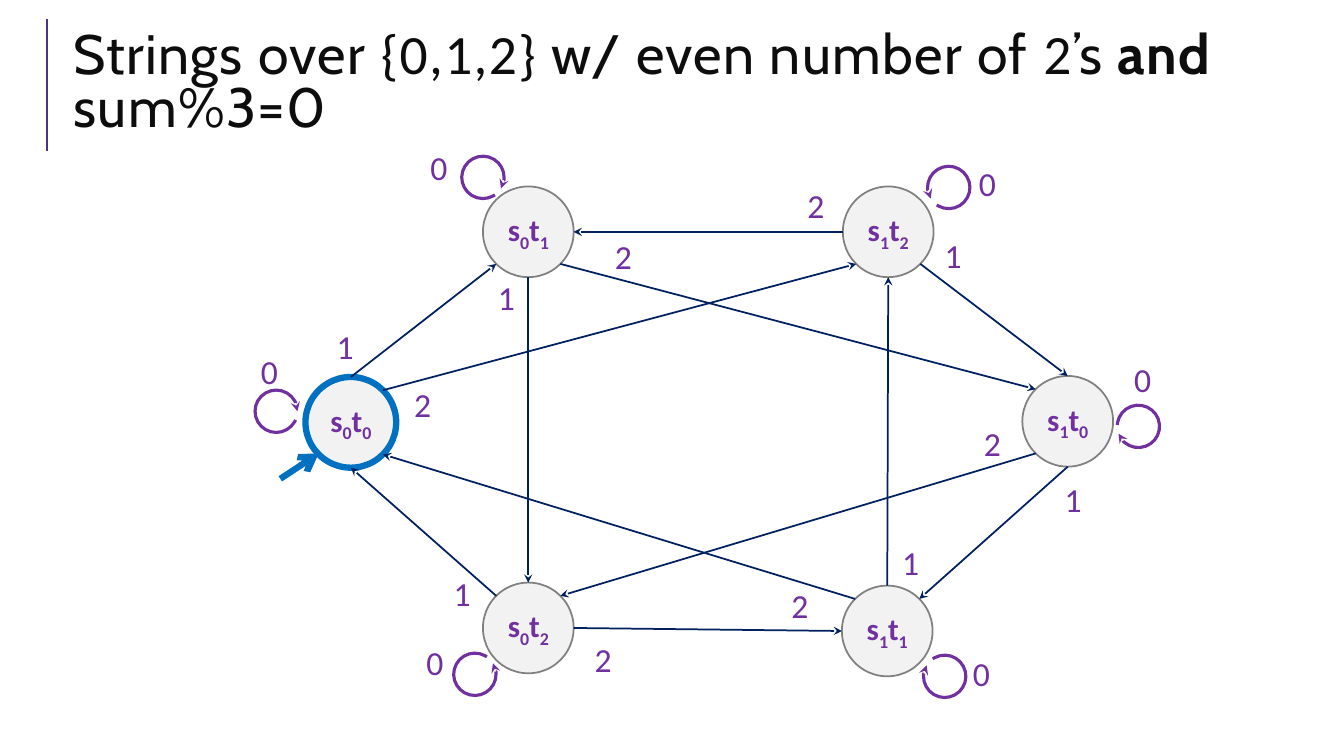
from math import cos, radians, sin

from pptx import Presentation
from pptx.dml.color import RGBColor
from pptx.enum.shapes import MSO_CONNECTOR, MSO_SHAPE
from pptx.enum.text import MSO_ANCHOR, MSO_AUTO_SIZE, PP_ALIGN
from pptx.oxml.ns import qn
from pptx.oxml.xmlchemy import OxmlElement
from pptx.util import Pt

COLORS = {"ink": "0D0D0D", "rule": "4C3282", "state": "F2F2F2", "outline": "808080",
          "start": "0070C0", "edge": "002060", "label": "7030A0"}

# text, font, bold
TITLE = [("Strings over ", "Cabin", False), ("{0,1,2} ", "Calibri", False),
         ("w/ even number of ", "Cabin", False), ("2", "Calibri", False),
         ("’s ", "Cabin", False), ("and", "Cabin", True), (" sum%3=0", "Cabin", False)]
TITLE_BOX = (63, 29, 1223, 111)
TITLE_RULE = ((47, 150), (47, 19))

# state: left, top
STATES = {"s0t0": (303, 374), "s1t0": (1014, 373), "s0t1": (479, 185),
          "s0t2": (479, 578), "s1t1": (835, 581), "s1t2": (836, 185)}
START = "s0t0"
START_ARROW = ((278, 475), (316, 450))

# from state, side, to state, side, symbol, symbol position
EDGES = [
    ("s0t0", "top", "s0t1", "bottom left", "1", (324, 318)),
    ("s0t1", "bottom", "s0t2", "top", "1", (484, 270)),
    ("s0t2", "top left", "s0t0", "bottom", "1", (440, 563)),
    ("s1t0", "bottom", "s1t1", "top right", "1", (1046, 470)),
    ("s1t1", "top", "s1t2", "bottom", "1", (885, 533)),
    ("s1t2", "bottom right", "s1t0", "top", "1", (927, 228)),
    ("s0t0", "top right", "s1t2", "bottom left", "2", (401, 376)),
    ("s1t2", "left", "s0t1", "right", "2", (791, 179)),
    ("s0t1", "bottom right", "s1t0", "top left", "2", (600, 229)),
    ("s1t0", "bottom left", "s0t2", "top right", "2", (966, 415)),
    ("s0t2", "right", "s1t1", "left", "2", (580, 629)),
    ("s1t1", "top left", "s0t0", "bottom right", "2", (775, 575)),
]

# loop position, rotation, flips, symbol position
LOOPS = [((458, 155), 31.3, "", (417, 141)), ((920, 165), 328.7, "H", (961, 157)),
         ((253, 387), 0, "", (249, 343)), ((916, 650), 31.3, "HV", (955, 643)),
         ((1108, 402), 159.7, "", (1115, 351)), ((450, 648), 328.7, "V", (413, 632))]
LOOP_SYMBOL = "0"

PX = 9144
DIAMETER, LOOP_SIZE = 90, 42
LABEL_SIZE = (39, 50)
ARC_START = 14.54
SIDE_ANGLES = {"right": 0, "bottom right": 45, "bottom": 90, "bottom left": 135,
               "left": 180, "top left": 225, "top": 270, "top right": 315}


def emu(*lengths):
    return [round(length * PX) for length in lengths]


def rgb(name):
    return RGBColor.from_string(COLORS[name])


def add_run(paragraph, text, size, color, font="Calibri", bold=False):
    run = paragraph.add_run()
    run.text = text
    run.font.name, run.font.size, run.font.bold = font, Pt(size), bold
    run.font.color.rgb = rgb(color)
    return run


def style_line(shape, color, width, head=None):
    shape.line.color.rgb = rgb(color)
    shape.line.width = Pt(width)
    if head:
        tail = OxmlElement("a:tailEnd")
        tail.set("type", head)
        shape._element.spPr.find(qn("a:ln")).append(tail)


def add_line(begin, end, color, width, head=None):
    line = slide.shapes.add_connector(MSO_CONNECTOR.STRAIGHT, *emu(*begin, *end))
    style_line(line, color, width, head)
    line._element.spPr.append(OxmlElement("a:effectLst"))


def rim_point(state, side):
    """Point on a state's circle at the named side."""
    radius, angle = DIAMETER / 2, radians(SIDE_ANGLES[side])
    left, top = STATES[state]
    return left + radius * (1 + cos(angle)), top + radius * (1 + sin(angle))


def add_state(name, position):
    circle = slide.shapes.add_shape(MSO_SHAPE.OVAL, *emu(*position, DIAMETER, DIAMETER))
    circle.shadow.inherit = False
    circle.fill.solid()
    circle.fill.fore_color.rgb = rgb("state")
    style_line(circle, *(("start", 4.5) if name == START else ("outline", 1.25)))
    frame = circle.text_frame
    frame.word_wrap = False
    frame.vertical_anchor = MSO_ANCHOR.MIDDLE
    paragraph = frame.paragraphs[0]
    paragraph.alignment = PP_ALIGN.CENTER
    for character in name:
        run = add_run(paragraph, character, 22, "label", bold=True)
        if character.isdigit():
            run.font._element.set("baseline", "-25000")


def add_symbol(symbol, position):
    box = slide.shapes.add_textbox(*emu(*position, *LABEL_SIZE))
    box.text_frame.word_wrap = False
    add_run(box.text_frame.paragraphs[0], symbol, 24, "label")


def add_loop(position, rotation, flips):
    loop = slide.shapes.add_shape(MSO_SHAPE.ARC, *emu(*position, LOOP_SIZE, LOOP_SIZE))
    loop.shadow.inherit = False
    loop.fill.background()
    loop.adjustments[0], loop.adjustments[1] = ARC_START, 0
    loop.rotation = rotation
    for axis in flips:
        loop._element.spPr.xfrm.set("flip" + axis, "1")
    style_line(loop, "label", 2.25, "stealth")


def fill_title():
    title = slide.shapes.title
    title.left, title.top, title.width, title.height = emu(*TITLE_BOX)
    frame = title.text_frame
    frame.word_wrap = True
    frame.auto_size = MSO_AUTO_SIZE.NONE
    frame.vertical_anchor = MSO_ANCHOR.MIDDLE
    paragraph = frame.paragraphs[0]
    paragraph.alignment = PP_ALIGN.LEFT
    paragraph.line_spacing = 0.8
    for text, font, bold in TITLE:
        run = add_run(paragraph, text, 39.6, "ink", font, bold)
        run.font._element.set("spc", "100")


deck = Presentation()
deck.slide_width, deck.slide_height = emu(1333, 750)
slide = deck.slides.add_slide(deck.slide_layouts[5])

fill_title()
add_line(*TITLE_RULE, "rule", 1.5)
for name, position in STATES.items():
    add_state(name, position)
add_line(*START_ARROW, "start", 4.5, "arrow")
for source, source_side, target, target_side, symbol, position in EDGES:
    add_line(rim_point(source, source_side), rim_point(target, target_side),
             "edge", 1.25, "stealth")
    add_symbol(symbol, position)
for position, rotation, flips, symbol_position in LOOPS:
    add_loop(position, rotation, flips)
    add_symbol(LOOP_SYMBOL, symbol_position)

deck.save("out.pptx")
